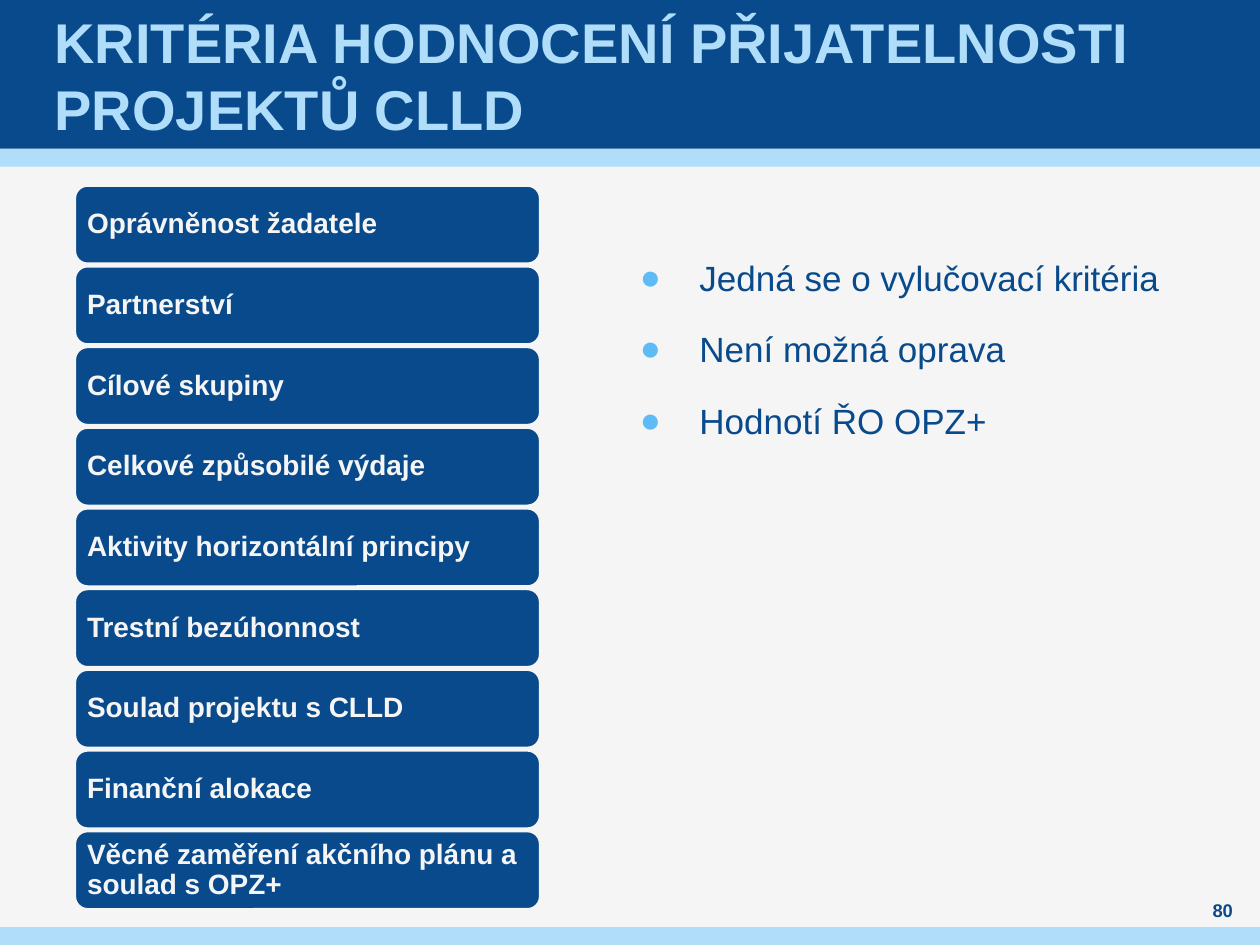
from lxml.etree import SubElement
from pptx import Presentation
from pptx.dml.color import RGBColor
from pptx.enum.shapes import MSO_SHAPE
from pptx.enum.text import MSO_ANCHOR, PP_ALIGN
from pptx.oxml.ns import qn
from pptx.util import Cm, Pt

TITLE = "KRITÉRIA HODNOCENÍ PŘIJATELNOSTI PROJEKTŮ CLLD"
CRITERIA = [
    "Oprávněnost žadatele",
    "Partnerství",
    "Cílové skupiny",
    "Celkové způsobilé výdaje",
    "Aktivity horizontální principy",
    "Trestní bezúhonnost",
    "Soulad projektu s CLLD",
    "Finanční alokace",
    "Věcné zaměření akčního plánu a soulad s OPZ+",
]
NOTES = ["Jedná se o vylučovací kritéria", "Není možná oprava", "Hodnotí ŘO OPZ+"]
PAGE = "80"

COLORS = {"navy": "084A8B", "sky": "AFDDFA", "bullet": "5FBBF5", "paper": "F5F5F5"}
WIDTH, HEIGHT = 25.4, 19.05
HEADER, STRIPE = 3.0, 0.36
BANDS = [  # top, height, colour
    (HEADER, STRIPE, "sky"),
    (0, HEADER, "navy"),
    (HEIGHT - STRIPE, STRIPE, "sky"),
]
COLUMN = {"left": 1.5, "top": 3.73, "width": 9.4, "height": 14.61, "gap": 0.03}

TITLE_FONT = {"size": Pt(32), "bold": True}
BOX_FONT = {"size": Pt(16), "bold": True}
NOTE_FONT = {"size": Pt(20), "bold": False}
PAGE_FONT = {"size": Pt(10.5), "bold": True}
BOX_PARA = {"alignment": PP_ALIGN.LEFT, "line_spacing": 0.9}
NOTE_PARA = {"line_spacing": Pt(28.8), "space_before": Pt(6), "space_after": Pt(6)}
PAGE_PARA = {"alignment": PP_ALIGN.CENTER, "space_after": Pt(6)}


def rgb(name):
    return RGBColor.from_string(COLORS[name])


def set_all(obj, values):
    for name, value in values.items():
        setattr(obj, name, value)


def write(sp, lines, color, font, para, inset=(0, 0), anchor=MSO_ANCHOR.MIDDLE):
    """Fill a shape with one paragraph per line; inset is (sides, top and bottom) in cm."""
    tf = sp.text_frame
    x, y = (Cm(v) for v in inset)
    set_all(tf, {"word_wrap": True, "vertical_anchor": anchor, "margin_left": x,
                 "margin_right": x, "margin_top": y, "margin_bottom": y})
    for i, line in enumerate(lines):
        p = tf.paragraphs[0] if i == 0 else tf.add_paragraph()
        set_all(p, para)
        r = p.add_run()
        r.text = line
        set_all(r.font, {"name": "Arial", **font})
        r.font.color.rgb = rgb(color)
    return tf


def add_block(s, kind, left, top, width, height, color):
    sp = s.shapes.add_shape(kind, Cm(left), Cm(top), Cm(width), Cm(height))
    sp.shadow.inherit = False
    sp.fill.solid()
    sp.fill.fore_color.rgb = rgb(color)
    sp.line.fill.background()
    return sp


def add_text(s, left, top, width, height, *args, **kwargs):
    sp = s.shapes.add_textbox(Cm(left), Cm(top), Cm(width), Cm(height))
    return write(sp, *args, **kwargs)


def add_bullet(p, indent):
    pPr = p._p.get_or_add_pPr()
    pPr.set("marL", str(Cm(indent)))
    pPr.set("indent", str(-Cm(indent)))
    clr = SubElement(pPr, qn("a:buClr"))
    SubElement(clr, qn("a:srgbClr"), val=COLORS["bullet"])
    SubElement(pPr, qn("a:buFont"), typeface="Arial")
    SubElement(pPr, qn("a:buChar"), char="●")


def add_criteria(s):
    n, gap = len(CRITERIA), COLUMN["gap"]
    height = (COLUMN["height"] - (n - 1) * gap) / n
    for i, text in enumerate(CRITERIA):
        top = COLUMN["top"] + i * (height + gap)
        sp = add_block(s, MSO_SHAPE.ROUNDED_RECTANGLE, COLUMN["left"], top,
                       COLUMN["width"], height, "navy")
        sp.line.color.rgb = rgb("paper")
        sp.line.width = Pt(2)
        write(sp, [text], "paper", BOX_FONT, BOX_PARA, inset=(0.18, 0.1))


def main():
    prs = Presentation()
    prs.slide_width, prs.slide_height = Cm(WIDTH), Cm(HEIGHT)
    s = prs.slides.add_slide(prs.slide_layouts[6])
    s.background.fill.solid()
    s.background.fill.fore_color.rgb = rgb("paper")

    for top, height, color in BANDS:
        add_block(s, MSO_SHAPE.RECTANGLE, 0, top, WIDTH, height, color)
    add_text(s, 1, 0, 23.4, HEADER, [TITLE], "sky", TITLE_FONT, {}, inset=(0.1, 0))
    tf = add_text(s, 12.9, 5, 11, 12, NOTES, "navy", NOTE_FONT, NOTE_PARA,
                  anchor=MSO_ANCHOR.TOP)
    for p in tf.paragraphs:
        add_bullet(p, 1.2)
    add_text(s, 24, 18.1, 1.3, 0.5, [PAGE], "navy", PAGE_FONT, PAGE_PARA)
    add_criteria(s)
    prs.save("out.pptx")


if __name__ == "__main__":
    main()
